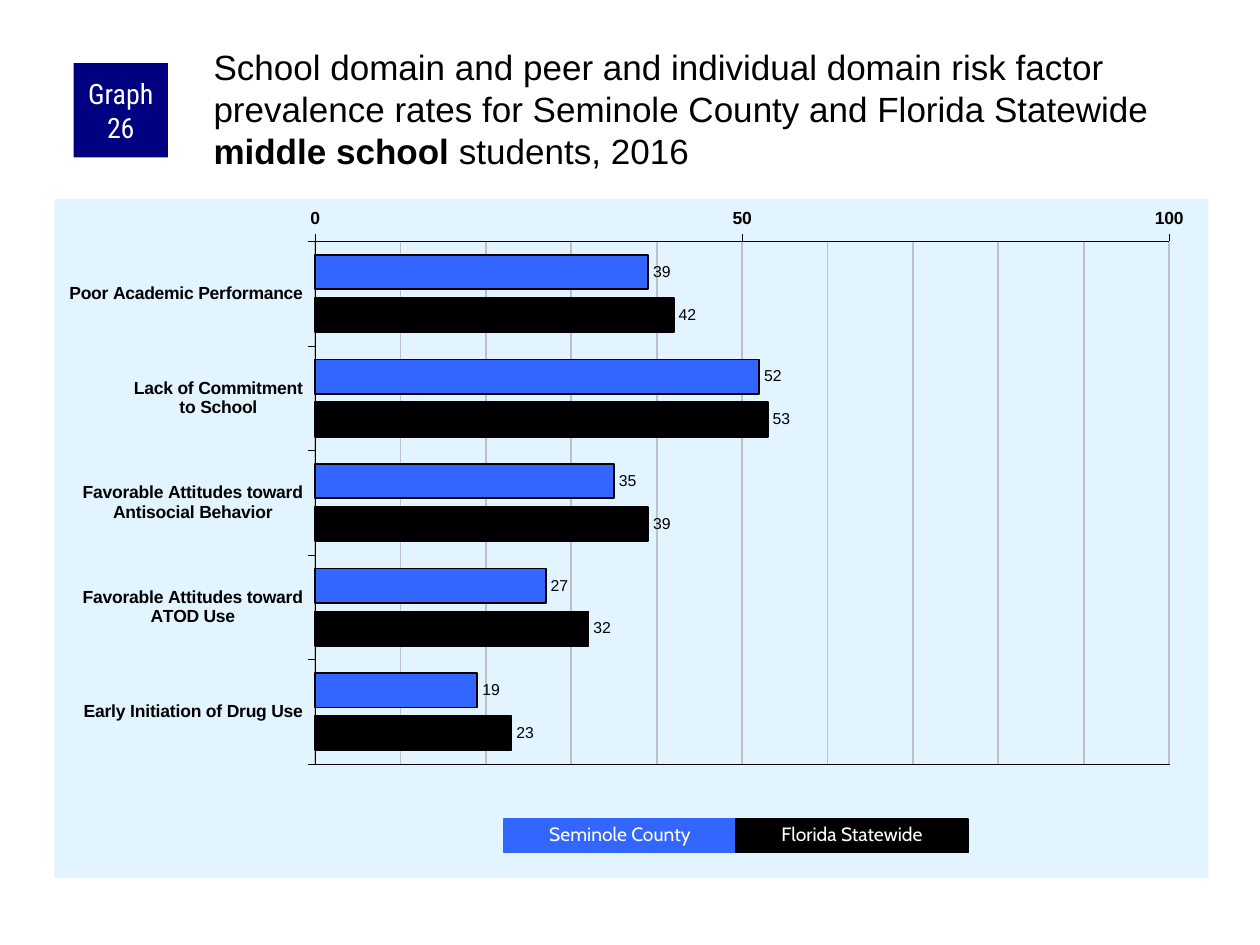
import copy
from dataclasses import dataclass
from typing import Any

import lxml.etree
import pptx
import pptx.chart.data
import pptx.dml.color
import pptx.enum.chart
import pptx.enum.text
import pptx.enum.shapes
import pptx.oxml
import pptx.oxml.ns
import pptx.util

Pt = pptx.util.Pt
BLUE, BLACK, WHITE = "3366FF", "000000", "FFFFFF"
PANEL, NAVY, GRID = "E1F4FF", "000080", "C0C0C0"


@dataclass
class Box:
    text: str
    left: float
    top: float
    width: float
    height: float
    fill: str
    font: str
    size: float
    text_format: dict[str, Any]
    spacing: float = 1.0
    line: str | None = None


@dataclass
class Series:
    name: str
    values: tuple[int, ...]
    fill: str


def color(value: str) -> pptx.dml.color.RGBColor:
    return pptx.dml.color.RGBColor.from_string(value)


def set_attributes(target: Any, values: dict[str, Any]) -> None:
    for name, value in values.items():
        setattr(target, name, value)


def set_font(font: Any, name: str, size: float, value: str, bold: bool = False) -> None:
    set_attributes(font, {"name": name, "size": Pt(size), "bold": bold})
    font.color.rgb = color(value)


def set_fill(fill: Any, value: str) -> None:
    fill.solid()
    fill.fore_color.rgb = color(value)


def set_line(line: Any, value: str, width: float) -> None:
    set_fill(line.fill, value)
    line.width = Pt(width)


def place(shape: Any, left: float, top: float, width: float, height: float) -> None:
    set_attributes(shape, {"left": Pt(left), "top": Pt(top),
                           "width": Pt(width), "height": Pt(height)})


def chart_xml(body: str, tag: str) -> lxml.etree._Element:
    return pptx.oxml.parse_xml(
        f'<c:{tag} {pptx.oxml.ns.nsdecls("c", "a")}>{body}</c:{tag}>')


def solid_xml(value: str) -> str:
    return f'<a:solidFill><a:srgbClr val="{value}"/></a:solidFill>'


def add_title(slide: Any) -> None:
    title = slide.shapes.title
    place(title, 120, 24, 570, 60)
    frame = title.text_frame
    set_attributes(frame, {
        "margin_left": Pt(2), "margin_top": Pt(2), "margin_right": 0, "margin_bottom": 0,
        "word_wrap": True, "auto_size": pptx.enum.text.MSO_AUTO_SIZE.NONE,
        "vertical_anchor": pptx.enum.text.MSO_ANCHOR.TOP})
    paragraph = frame.paragraphs[0]
    paragraph.alignment = pptx.enum.text.PP_ALIGN.LEFT
    runs = (("School domain and peer and individual domain risk factor prevalence rates "
             "for Seminole County and Florida Statewide ", False),
            ("middle school", True), (" students, 2016", False))
    for text, bold in runs:
        run = paragraph.add_run()
        run.text = text
        set_font(run.font, "Arial", 20, BLACK, bold)


def add_box(slide: Any, box: Box) -> None:
    shape = slide.shapes.add_shape(
        pptx.enum.shapes.MSO_SHAPE.RECTANGLE,
        Pt(box.left), Pt(box.top), Pt(box.width), Pt(box.height))
    shape.shadow.inherit = False
    set_fill(shape.fill, box.fill)
    if box.line:
        set_line(shape.line, box.line, 0.75)
    else:
        shape.line.fill.background()
    set_attributes(shape.text_frame, {"word_wrap": True, **box.text_format})
    paragraph = shape.text_frame.paragraphs[0]
    set_attributes(paragraph, {"alignment": pptx.enum.text.PP_ALIGN.CENTER,
                               "line_spacing": box.spacing})
    run = paragraph.add_run()
    run.text = box.text
    set_font(run.font, box.font, box.size, WHITE)


def add_risk_chart(slide: Any, categories: list[str], series_list: list[Series]) -> None:
    data = pptx.chart.data.CategoryChartData()
    data.categories = categories
    for series in series_list:
        data.add_series(series.name, series.values)
    chart = slide.shapes.add_chart(
        pptx.enum.chart.XL_CHART_TYPE.BAR_CLUSTERED,
        Pt(31), Pt(113.8), Pt(659.5), Pt(388), data).chart
    set_attributes(chart, {"has_title": False, "has_legend": False})
    set_font(chart.font, "Arial", 11.8, BLACK)

    plot = chart.plots[0]
    set_attributes(plot, {"gap_width": 80, "overlap": -25, "vary_by_categories": False})
    for drawn, series in zip(plot.series, series_list):
        set_fill(drawn.format.fill, series.fill)
        set_line(drawn.format.line, BLACK, 1)
        drawn.invert_if_negative = False
        labels = drawn.data_labels
        set_attributes(labels, {
            "show_value": True,
            "position": pptx.enum.chart.XL_LABEL_POSITION.OUTSIDE_END})
        set_font(labels.font, "Arial", 9, BLACK)

    marks = pptx.enum.chart.XL_TICK_MARK
    for axis in (chart.category_axis, chart.value_axis):
        set_attributes(axis, {"major_tick_mark": marks.OUTSIDE,
                              "minor_tick_mark": marks.NONE})
        set_font(axis.tick_labels.font, "Arial", 10, BLACK, True)
        set_line(axis.format.line, BLACK, 0.25)
    set_attributes(chart.category_axis, {
        "reverse_order": True, "crosses": pptx.enum.chart.XL_AXIS_CROSSES.MAXIMUM})
    value_axis = chart.value_axis
    set_attributes(value_axis, {
        "minimum_scale": 0, "maximum_scale": 100, "major_unit": 50, "minor_unit": 10,
        "has_major_gridlines": True, "has_minor_gridlines": True})
    set_line(value_axis.major_gridlines.format.line, GRID, 1)

    chart_space = chart.element
    chart_space.chart.addnext(
        chart_xml(solid_xml(PANEL) + "<a:ln><a:noFill/></a:ln>", "spPr"))
    plot_area = chart_space.chart.plotArea
    major, minor = (plot_area.find(f".//{pptx.oxml.ns.qn(tag)}")
                    for tag in ("c:majorGridlines", "c:minorGridlines"))
    minor.append(copy.deepcopy(major[0]))
    for layout in plot_area.findall(pptx.oxml.ns.qn("c:layout")):
        plot_area.remove(layout)
    settings = {"layoutTarget": "inner", "xMode": "edge", "yMode": "edge",
                "x": 0.226, "y": 0.062, "w": 0.74, "h": 0.77}
    body = "".join(f'<c:{name} val="{value}"/>' for name, value in settings.items())
    plot_area.insert(0, chart_xml(f"<c:manualLayout>{body}</c:manualLayout>", "layout"))
    plot_area.append(chart_xml(
        f'<a:noFill/><a:ln w="{Pt(0.25)}">{solid_xml(BLACK)}</a:ln>', "spPr"))


def main() -> None:
    presentation = pptx.Presentation()
    set_attributes(presentation, {"slide_width": Pt(720), "slide_height": Pt(540)})
    slide = presentation.slides.add_slide(presentation.slide_layouts[5])
    categories = ["Poor Academic Performance", "Lack of Commitment\nto School",
                  "Favorable Attitudes toward\nAntisocial Behavior",
                  "Favorable Attitudes toward\nATOD Use", "Early Initiation of Drug Use"]
    series_list = [Series("Seminole County", (39, 52, 35, 27, 19), BLUE),
                   Series("Florida Statewide", (42, 53, 39, 32, 23), BLACK)]
    add_risk_chart(slide, categories, series_list)
    badge_format = {"margin_left": Pt(3.6), "margin_right": Pt(3.6), "margin_top": 0,
                    "margin_bottom": 0,
                    "vertical_anchor": pptx.enum.text.MSO_ANCHOR.MIDDLE}
    add_box(slide, Box("Graph 26", 42, 36, 54, 54, NAVY, "Roboto Condensed", 16,
                       badge_format))
    add_title(slide)
    key_format = {"auto_size": pptx.enum.text.MSO_AUTO_SIZE.SHAPE_TO_FIT_TEXT,
                  "vertical_anchor": pptx.enum.text.MSO_ANCHOR.TOP}
    key_width = 132.6
    for index, series in enumerate(series_list):
        add_box(slide, Box(series.name, 288 + index * key_width, 468, key_width, 19.4,
                           series.fill, "Cabin", 11, key_format, 0.9, series.fill))
    presentation.save("out.pptx")


if __name__ == "__main__":
    main()
